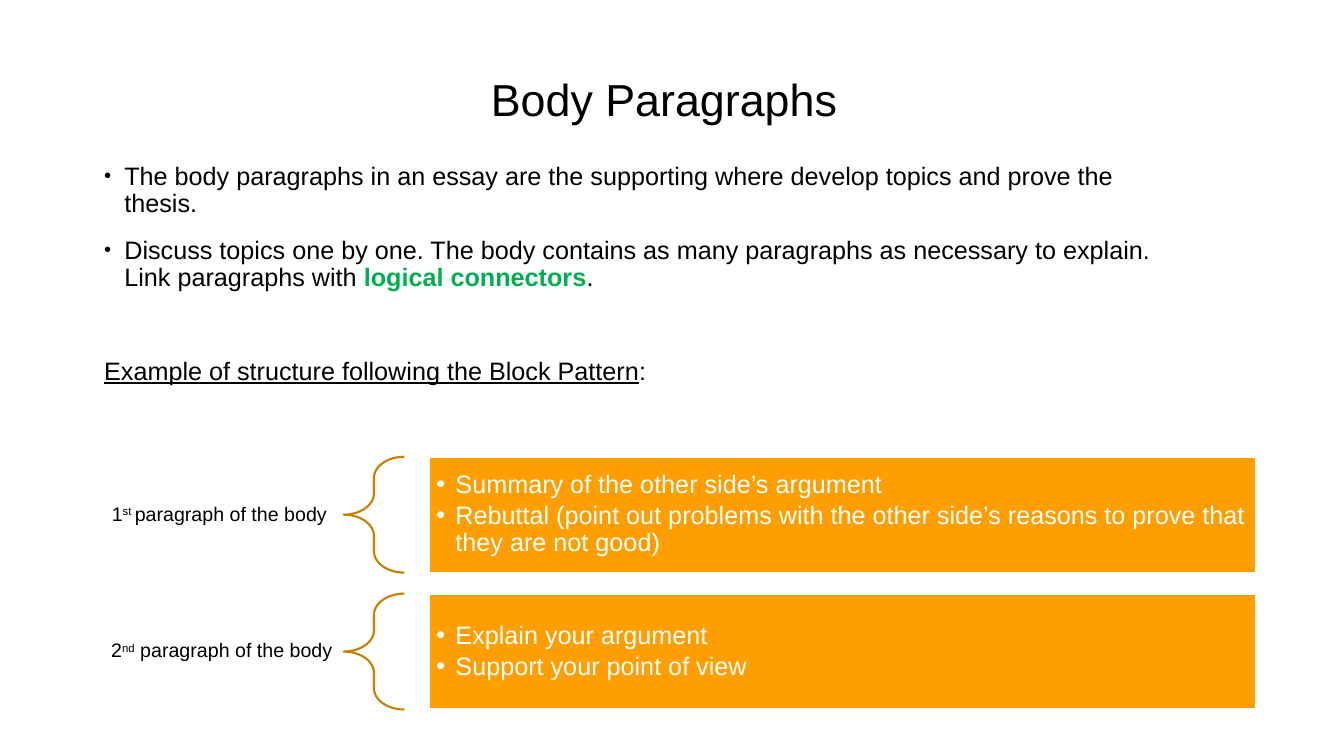
"""Build the "Body Paragraphs" slide with its block pattern example."""
from lxml import etree
from pptx import Presentation
from pptx.dml.color import RGBColor
from pptx.enum.shapes import MSO_SHAPE
from pptx.enum.text import MSO_ANCHOR, MSO_AUTO_SIZE, PP_ALIGN
from pptx.oxml.ns import qn
from pptx.util import Cm, Pt

BLACK = RGBColor(0x00, 0x00, 0x00)
WHITE = RGBColor(0xFF, 0xFF, 0xFF)
GREEN = RGBColor(0x00, 0xB0, 0x50)
ORANGE = RGBColor(0xFE, 0x9E, 0x00)
DARK_ORANGE = RGBColor(0xCB, 0x7F, 0x00)
MIDDLE, TOP = MSO_ANCHOR.MIDDLE, MSO_ANCHOR.TOP
CENTER, LEFT, RIGHT = PP_ALIGN.CENTER, PP_ALIGN.LEFT, PP_ALIGN.RIGHT
LEFT_BRACE, RECTANGLE = MSO_SHAPE.LEFT_BRACE, MSO_SHAPE.RECTANGLE
NO_AUTOFIT = MSO_AUTO_SIZE.NONE


def add_run(paragraph, text, size, color):
    run = paragraph.add_run()
    run.text = text
    run.font.name = "Arial"
    run.font.size = Pt(size)
    run.font.color.rgb = color
    return run


def format_paragraph(paragraph, alignment, before=0, after=0, margin=0, hanging=0, bullet_size=None):
    paragraph.alignment = alignment
    paragraph.line_spacing = 0.9
    paragraph.space_before = Pt(before)
    paragraph.space_after = Pt(after)
    properties = paragraph._p.get_or_add_pPr()
    properties.set("marL", str(Cm(margin)))
    properties.set("indent", str(-Cm(hanging)))
    if bullet_size:
        etree.SubElement(properties, qn("a:buSzPct"), val=str(bullet_size * 1000))
        etree.SubElement(properties, qn("a:buFont"), typeface="Arial")
        etree.SubElement(properties, qn("a:buChar"), char="•")
    else:
        etree.SubElement(properties, qn("a:buNone"))


presentation = Presentation()
presentation.slide_width = Cm(33.87)
presentation.slide_height = Cm(19.05)
slide = presentation.slides.add_slide(presentation.slide_layouts[1])

title = slide.shapes.title
title.left, title.top, title.width, title.height = Cm(3.18), Cm(1.7), Cm(27.43), Cm(1.73)
title.text_frame.auto_size = NO_AUTOFIT
title.text_frame.vertical_anchor = MIDDLE
title_paragraph = title.text_frame.paragraphs[0]
format_paragraph(title_paragraph, CENTER)
add_run(title_paragraph, "Body Paragraphs ", 32, BLACK)

body = slide.placeholders[1]
body.left, body.top, body.width, body.height = Cm(2.24), Cm(3.99), Cm(27.43), Cm(11.23)
body.text_frame.auto_size = NO_AUTOFIT
body.text_frame.vertical_anchor = TOP

thesis = body.text_frame.paragraphs[0]
format_paragraph(thesis, LEFT, before=14, margin=0.64, hanging=0.51, bullet_size=80)
add_run(thesis, "The body paragraphs in an essay are the supporting where develop topics "
        "and prove the thesis.", 18, BLACK)

topics = body.text_frame.add_paragraph()
format_paragraph(topics, LEFT, before=14, margin=0.64, hanging=0.51, bullet_size=80)
add_run(topics, "Discuss topics one by one. The body contains as many paragraphs as necessary "
        "to explain. Link paragraphs with ", 18, BLACK)
add_run(topics, "logical connectors", 18, GREEN).font.bold = True
add_run(topics, ".", 18, BLACK)

example = body.text_frame.add_paragraph()
format_paragraph(example, LEFT, before=47.5, margin=0.13)
add_run(example, "Example of structure following the Block Pattern", 18, BLACK).font.underline = True
add_run(example, ":", 18, BLACK)

FIRST_TOP, ROW_PITCH, ROW_HEIGHT = 11.51, 3.45, 2.92
blocks = [
    ("1", "st ", "paragraph of the body ", [
        "Summary of the other side’s argument",
        "Rebuttal (point out problems with the other side’s reasons to prove that they are not good)",
    ]),
    ("2", "nd", " paragraph of the body", [
        "Explain your argument",
        "Support your point of view",
    ]),
]

for row, (number, ordinal, caption, points) in enumerate(blocks):
    top = Cm(FIRST_TOP + row * ROW_PITCH)
    height = Cm(ROW_HEIGHT)

    label = slide.shapes.add_textbox(Cm(1.02), top, Cm(7.64), height)
    label_frame = label.text_frame
    label_frame.word_wrap = True
    label_frame.vertical_anchor = MIDDLE
    label_frame.margin_left = label_frame.margin_right = Cm(0.28)
    label_frame.margin_top = label_frame.margin_bottom = Cm(0.1)
    label_paragraph = label_frame.paragraphs[0]
    format_paragraph(label_paragraph, RIGHT, after=4.9)
    add_run(label_paragraph, number, 14, BLACK)
    ordinal_run = add_run(label_paragraph, ordinal, 14, BLACK)
    ordinal_run.font._element.set("baseline", "30000")
    add_run(label_paragraph, caption, 14, BLACK)

    brace = slide.shapes.add_shape(LEFT_BRACE, Cm(8.66), top, Cm(1.53), height)
    brace.shadow.inherit = False
    brace.adjustments[0] = 0.35
    brace.adjustments[1] = 0.5
    brace.fill.background()
    brace.line.color.rgb = DARK_ORANGE
    brace.line.width = Pt(1.5)

    panel = slide.shapes.add_shape(RECTANGLE, Cm(10.82), top, Cm(20.83), height)
    panel.shadow.inherit = False
    panel.fill.solid()
    panel.fill.fore_color.rgb = ORANGE
    panel.line.color.rgb = WHITE
    panel.line.width = Pt(1.5)
    panel_frame = panel.text_frame
    panel_frame.word_wrap = True
    panel_frame.vertical_anchor = MIDDLE
    panel_frame.margin_left = panel_frame.margin_right = Cm(0.18)
    panel_frame.margin_top = panel_frame.margin_bottom = Cm(0.18)
    for index, point in enumerate(points):
        paragraph = panel_frame.add_paragraph() if index else panel_frame.paragraphs[0]
        format_paragraph(paragraph, LEFT, after=2.7, margin=0.48, hanging=0.48, bullet_size=100)
        add_run(paragraph, point, 18, WHITE)

presentation.save("out.pptx")
